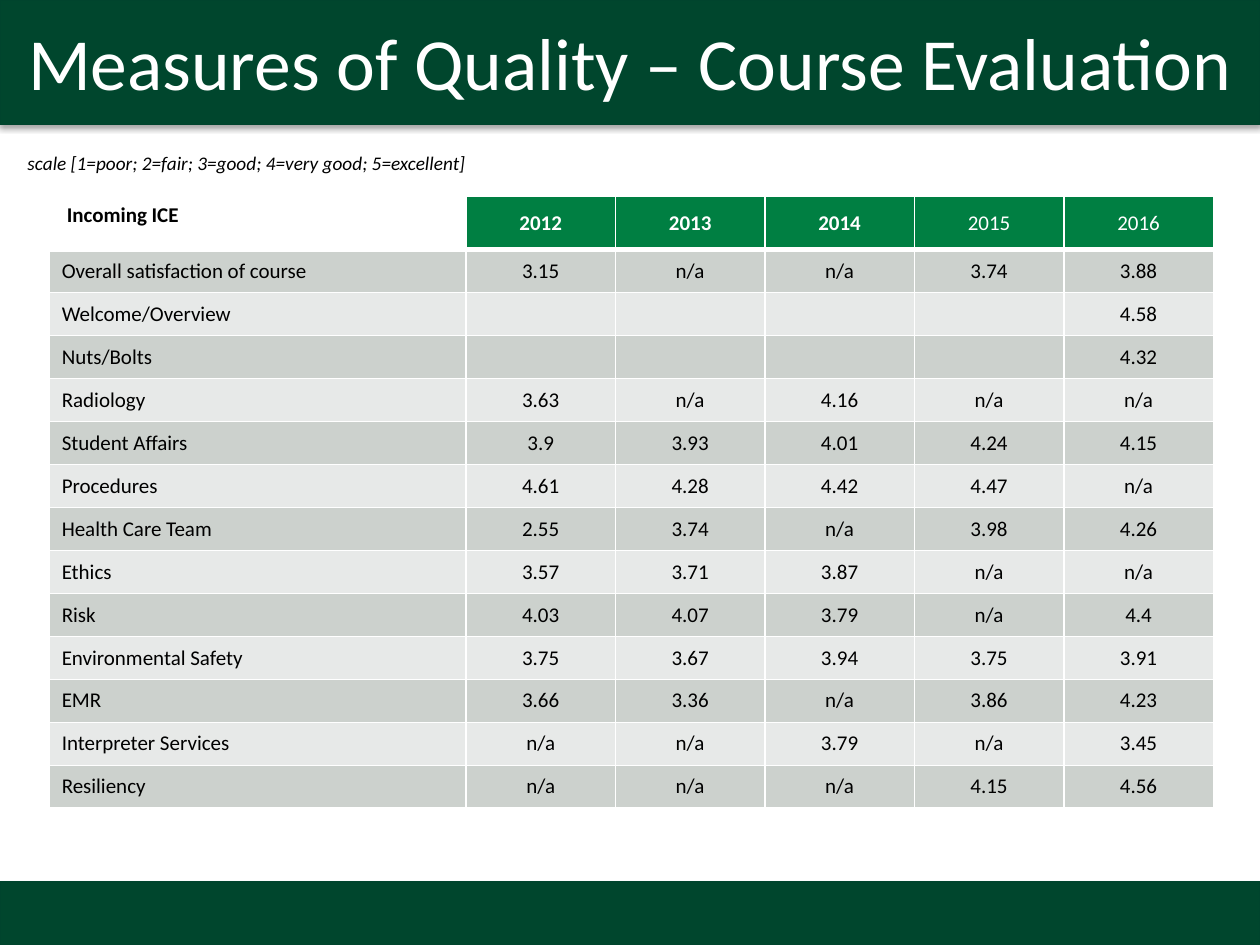
from lxml import etree
from pptx import Presentation, util as u
from pptx.dml.color import RGBColor
from pptx.enum import shapes, text
from pptx.oxml import ns, parse_xml

WIDE, HIGH = u.Inches(10), u.Inches(7.5)
DARK = RGBColor(0x00, 0x46, 0x2D)
EDGE = RGBColor(0x00, 0x44, 0x2D)
GREEN = RGBColor(0x00, 0x7F, 0x42)
GRAY = RGBColor(0xCC, 0xD1, 0xCD)
PALE = RGBColor(0xE7, 0xE9, 0xE8)
WHITE = RGBColor(0xFF, 0xFF, 0xFF)
BLACK = RGBColor(0x00, 0x00, 0x00)
FONT = "Calibri"
MID = text.MSO_ANCHOR.MIDDLE
LEFT, CENTER = text.PP_ALIGN.LEFT, text.PP_ALIGN.CENTER

HEAD = ["Incoming ICE", "2012", "2013", "2014", "2015", "2016"]
ROWS = [
    ["Overall satisfaction of course", "3.15", "n/a", "n/a", "3.74", "3.88"],
    ["Welcome/Overview", "", "", "", "", "4.58"],
    ["Nuts/Bolts", "", "", "", "", "4.32"],
    ["Radiology", "3.63", "n/a", "4.16", "n/a", "n/a"],
    ["Student Affairs", "3.9", "3.93", "4.01", "4.24", "4.15"],
    ["Procedures", "4.61", "4.28", "4.42", "4.47", "n/a"],
    ["Health Care Team", "2.55", "3.74", "n/a", "3.98", "4.26"],
    ["Ethics", "3.57", "3.71", "3.87", "n/a", "n/a"],
    ["Risk", "4.03", "4.07", "3.79", "n/a", "4.4"],
    ["Environmental Safety", "3.75", "3.67", "3.94", "3.75", "3.91"],
    ["EMR", "3.66", "3.36", "n/a", "3.86", "4.23"],
    ["Interpreter Services", "n/a", "n/a", "3.79", "n/a", "3.45"],
    ["Resiliency", "n/a", "n/a", "n/a", "4.15", "4.56"],
]


def area(left, top, wide, high):
    """Turn percentages of the slide into lengths."""
    return (int(WIDE * left / 100), int(HIGH * top / 100),
            int(WIDE * wide / 100), int(HIGH * high / 100))


def style(para, size, color, align=LEFT, bold=False, italic=False):
    """Align a paragraph and format its runs."""
    para.alignment = align
    for run in para.runs:
        font = run.font
        font.name, font.size = FONT, u.Pt(size)
        font.bold, font.italic = bold, italic
        font.color.rgb = color


def band(slide, box):
    """Draw a dark bar with a soft shadow below it."""
    bar = slide.shapes.add_shape(shapes.MSO_SHAPE.RECTANGLE, *box)
    bar.fill.solid()
    bar.fill.fore_color.rgb = DARK
    bar.line.color.rgb = EDGE
    bar.line.width = u.Pt(0.75)
    bar.shadow.inherit = False
    glow = bar._element.spPr.find(ns.qn("a:effectLst"))
    glow.append(parse_xml(
        f'<a:outerShdw {ns.nsdecls("a")} blurRad="{u.Pt(3.1)}" '
        f'dist="{u.Pt(1.8)}" dir="5400000" rotWithShape="0">'
        '<a:srgbClr val="000000"><a:alpha val="35000"/></a:srgbClr>'
        '</a:outerShdw>'))


def label(slide, box, words, size, color, anchor=text.MSO_ANCHOR.TOP, **look):
    """Place one line of text in a box."""
    frame = slide.shapes.add_textbox(*box).text_frame
    frame.word_wrap = True
    frame.vertical_anchor = anchor
    frame.text = words
    style(frame.paragraphs[0], size, color, **look)


def border(cell, base):
    """Give a cell white edges, with its own bottom width."""
    props = cell._tc.get_or_add_tcPr()
    for spot, side in enumerate("LRTB"):
        width = u.Pt(base if side == "B" else 1)
        line = etree.Element(ns.qn(f"a:ln{side}"), w=str(width))
        fill = etree.SubElement(line, ns.qn("a:solidFill"))
        etree.SubElement(fill, ns.qn("a:srgbClr"), val=str(WHITE))
        props.insert(spot, line)


def fill_cell(cell, words, row, col):
    """Write and format one cell by its row and column."""
    top, first = row == 0, col == 0
    corner = top and first
    cell.text = words
    para = cell.text_frame.paragraphs[0]
    color = WHITE if top and not first else BLACK
    style(para, 12, color, LEFT if first else CENTER, bold=top and col < 4)
    if not words:
        para._p.get_or_add_endParaRPr().set("sz", "1200")
    if corner:
        cell.margin_left = u.Inches(0.14)
        cell.fill.background()
    else:
        cell.vertical_anchor = MID
        cell.fill.solid()
        cell.fill.fore_color.rgb = GREEN if top else GRAY if row % 2 else PALE
    border(cell, 3 if top else 1)


def scores(slide, box):
    """Build the table of scores by topic and year."""
    wide, high = box[2:]
    data = [HEAD] + ROWS
    table = slide.shapes.add_table(len(data), len(HEAD), *box).table
    name, top = int(wide * 0.358), int(high * 0.087)
    for col, part in enumerate(table.columns):
        part.width = (wide - name) // (len(HEAD) - 1) if col else name
    for row, part in enumerate(table.rows):
        part.height = (high - top) // len(ROWS) if row else top
        for col, words in enumerate(data[row]):
            fill_cell(table.cell(row, col), words, row, col)


def main():
    """Build the slide and save it."""
    deck = Presentation()
    deck.slide_width, deck.slide_height = WIDE, HIGH
    slide = deck.slides.add_slide(deck.slide_layouts[6])
    band(slide, area(0, 0, 100, 13.2))
    band(slide, area(0, 93.33, 100, 6.67))
    label(slide, area(1.2, 15.33, 95, 10.67),
          "scale [1=poor; 2=fair; 3=good; 4=very good; 5=excellent]",
          11, BLACK, italic=True)
    label(slide, area(0, 0, 100, 12.93),
          "Measures of Quality – Course Evaluation",
          42, WHITE, MID, align=CENTER)
    scores(slide, area(3.9, 20.8, 92.4, 64.8))
    deck.save("out.pptx")


if __name__ == "__main__":
    main()
